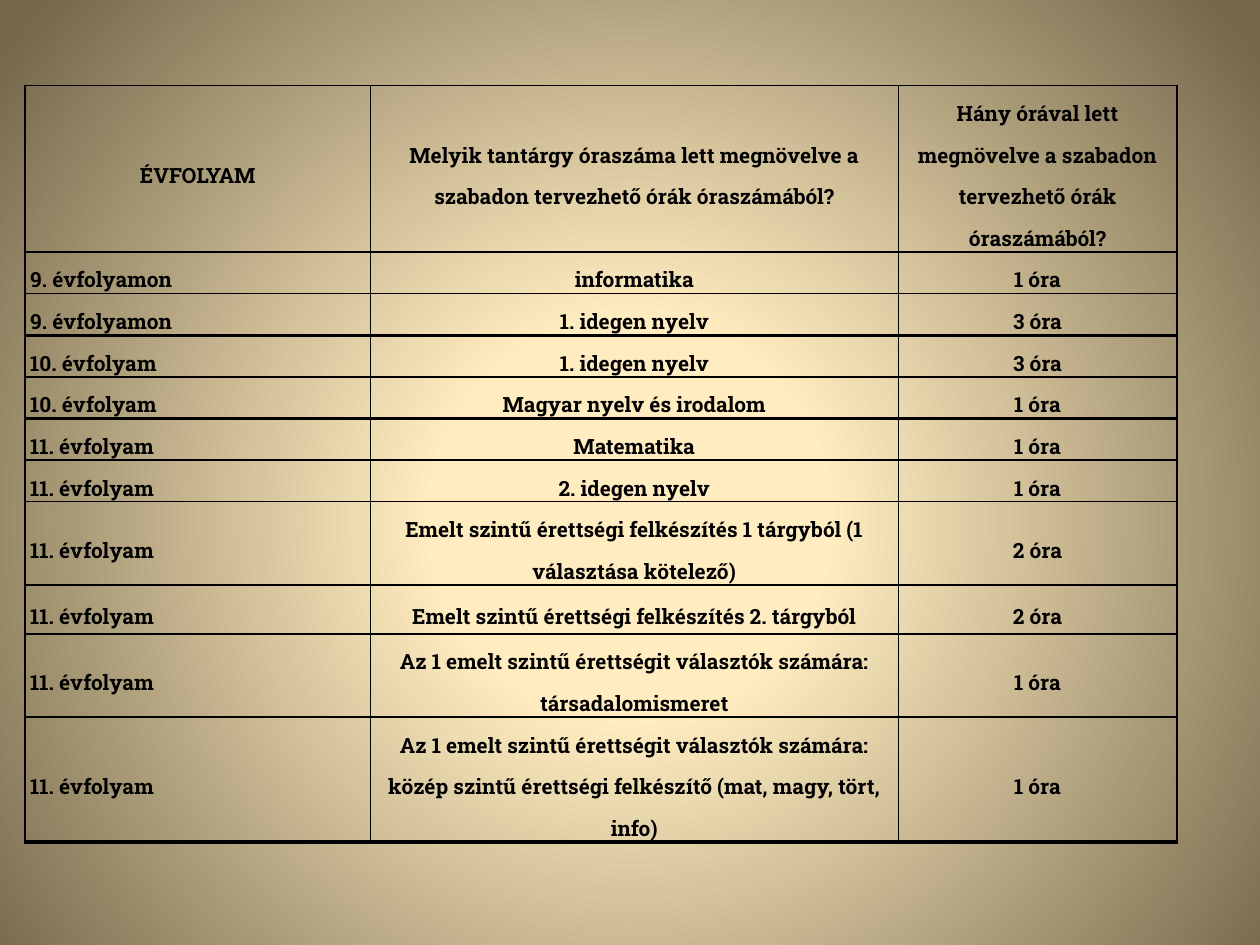
from lxml import etree
from pptx import Presentation
from pptx.dml.color import RGBColor
from pptx.enum.text import MSO_ANCHOR, PP_ALIGN
from pptx.oxml.ns import qn
from pptx.util import Inches, Pt

BLACK = RGBColor(0x00, 0x00, 0x00)
CREAM = RGBColor(0xFF, 0xEC, 0xC2)
LIGHT_CREAM = RGBColor(0xFF, 0xEC, 0xC0)
BROWN = RGBColor(0x74, 0x67, 0x4A)
MIDDLE = MSO_ANCHOR.MIDDLE
CENTER = PP_ALIGN.CENTER
JUSTIFY = PP_ALIGN.JUSTIFY

THIN, THICK = Pt(1), Pt(2.25)
THICK_BELOW = {2, 4, 10}
COLUMN_WIDTHS = [2.74, 4.19, 2.21]
CELL_FORMAT = {
    "vertical_anchor": MIDDLE,
    "margin_left": Inches(0.04),
    "margin_right": Inches(0.04),
    "margin_top": 0,
    "margin_bottom": 0,
}
FONT_FORMAT = {"name": "Roboto Slab", "size": Pt(12), "bold": True}
ROWS = [
    (1, "ÉVFOLYAM",
     "Melyik tantárgy óraszáma lett megnövelve a szabadon tervezhető órák óraszámából?",
     "Hány órával lett megnövelve a szabadon tervezhető órák óraszámából?"),
    (0.19, "9. évfolyamon", "informatika", "1 óra"),
    (0.19, "9. évfolyamon", "1. idegen nyelv", "3 óra"),
    (0.19, "10. évfolyam", "1. idegen nyelv", "3 óra"),
    (0.19, "10. évfolyam", "Magyar nyelv és irodalom", "1 óra"),
    (0.22, "11. évfolyam", "Matematika", "1 óra"),
    (0.19, "11. évfolyam", "2. idegen nyelv", "1 óra"),
    (0.39, "11. évfolyam",
     "Emelt szintű érettségi felkészítés 1 tárgyból (1 választása kötelező)", "2 óra"),
    (0.39, "11. évfolyam", "Emelt szintű érettségi felkészítés 2. tárgyból", "2 óra"),
    (0.39, "11. évfolyam",
     "Az 1 emelt szintű érettségit választók számára: társadalomismeret", "1 óra"),
    (0.59, "11. évfolyam",
     "Az 1 emelt szintű érettségit választók számára: közép szintű érettségi "
     "felkészítő (mat, magy, tört, info)", "1 óra"),
]


def add_solid_color(parent, color):
    fill = etree.SubElement(parent, qn("a:solidFill"))
    etree.SubElement(fill, qn("a:srgbClr"), val=str(color))


def set_borders(cell, widths):
    properties = cell._tc.get_or_add_tcPr()
    for position, (side, width) in enumerate(widths.items()):
        line = etree.Element(qn(f"a:ln{side}"), w=str(int(width)))
        add_solid_color(line, BLACK)
        properties.insert(position, line)


deck = Presentation()
deck.slide_width = Inches(10)
deck.slide_height = Inches(7.5)
page = deck.slides.add_slide(deck.slide_layouts[6])

page.background.fill.solid()
background = page._element.find(".//" + qn("p:bgPr"))
background.remove(background.find(qn("a:solidFill")))
gradient = etree.Element(qn("a:gradFill"), rotWithShape="1")
background.insert(0, gradient)
stops = etree.SubElement(gradient, qn("a:gsLst"))
for percent, color in [(0, CREAM), (25, LIGHT_CREAM), (100, BROWN)]:
    stop = etree.SubElement(stops, qn("a:gs"), pos=str(percent * 1000))
    etree.SubElement(stop, qn("a:srgbClr"), val=str(color))
circle = etree.SubElement(gradient, qn("a:path"), path="circle")
etree.SubElement(circle, qn("a:fillToRect"), l="10000", t="110000", r="10000", b="100000")

frame = page.shapes.add_table(
    len(ROWS), len(COLUMN_WIDTHS), Inches(0.2), Inches(0.68), Inches(9.13), Inches(5.49))
table = frame.table
table.first_row = False
table.horz_banding = False
for column, width in zip(table.columns, COLUMN_WIDTHS):
    column.width = Inches(width)

for row_index, (height, *texts) in enumerate(ROWS):
    table.rows[row_index].height = Inches(height)
    borders = {
        "L": THIN,
        "R": THIN,
        "T": THICK if row_index - 1 in THICK_BELOW else THIN,
        "B": THICK if row_index in THICK_BELOW else THIN,
    }
    for column_index, text in enumerate(texts):
        cell = table.cell(row_index, column_index)
        for name, value in CELL_FORMAT.items():
            setattr(cell, name, value)
        cell.fill.background()
        set_borders(cell, borders)
        para = cell.text_frame.paragraphs[0]
        para.alignment = JUSTIFY if row_index and column_index == 0 else CENTER
        para.line_spacing = 1.5
        span = para.add_run()
        span.text = text
        for name, value in FONT_FORMAT.items():
            setattr(span.font, name, value)
        span.font.color.rgb = BLACK

frame.height = Inches(5.49)
deck.save("out.pptx")
